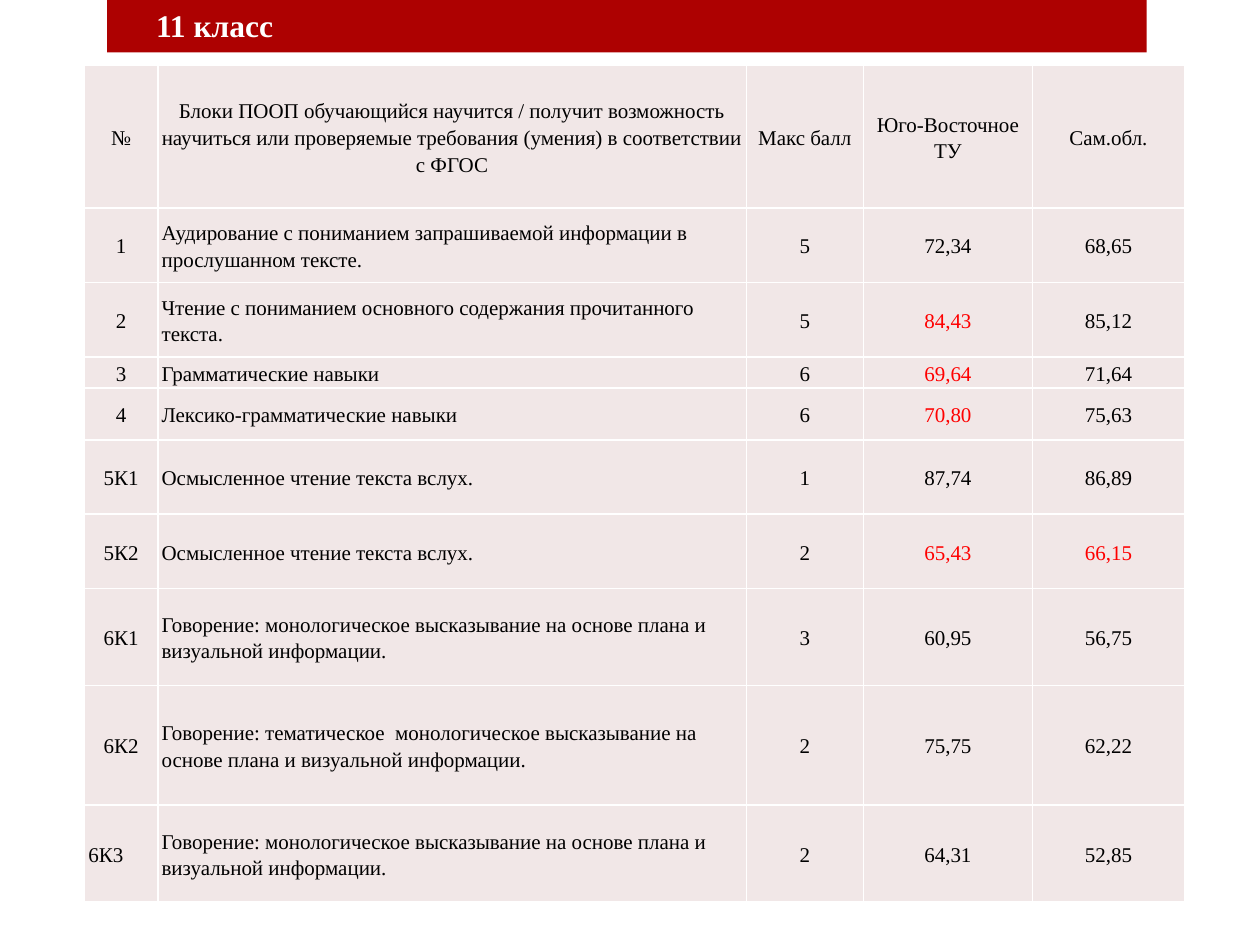
"""Build the grade 11 results slide with its table of skills and scores."""
from lxml.etree import SubElement
from pptx import Presentation
from pptx.dml.color import RGBColor
from pptx.enum.shapes import MSO_SHAPE
from pptx.enum.text import MSO_ANCHOR, MSO_AUTO_SIZE, PP_ALIGN
from pptx.oxml.ns import qn
from pptx.util import Pt

CRIMSON = RGBColor(0xAD, 0x01, 0x01)
BLUSH = RGBColor(0xF1, 0xE7, 0xE7)
WHITE = RGBColor(0xFF, 0xFF, 0xFF)
BLACK = RGBColor(0x00, 0x00, 0x00)
RED = RGBColor(0xFF, 0x00, 0x00)

COLUMN_WIDTHS = [41.8, 336.3, 67, 96.5, 87.1]
RESULTS = [
    (81.4, "№", "Блоки ПООП обучающийся научится / получит возможность научиться "
     "или проверяемые требования (умения) в соответствии с ФГОС",
     "Макс балл", "Юго-Восточное ТУ", "Сам.обл."),
    (42.5, "1", "Аудирование с пониманием запрашиваемой информации в прослушанном тексте.",
     "5", "72,34", "68,65"),
    (42.5, "2", "Чтение с пониманием основного содержания прочитанного текста.",
     "5", "84,43", "85,12"),
    (16.6, "3", "Грамматические навыки", "6", "69,64", "71,64"),
    (29.5, "4", "Лексико-грамматические навыки", "6", "70,80", "75,63"),
    (42.5, "5К1", "Осмысленное чтение текста вслух.", "1", "87,74", "86,89"),
    (42.5, "5К2", "Осмысленное чтение текста вслух.", "2", "65,43", "66,15"),
    (55.4, "6К1", "Говорение: монологическое высказывание на основе плана и "
     "визуальной информации.", "3", "60,95", "56,75"),
    (68.4, "6К2", "Говорение: тематическое  монологическое высказывание на основе плана и "
     "визуальной информации.", "2", "75,75", "62,22"),
    (55.4, "6К3", "Говорение: монологическое высказывание на основе плана и "
     "визуальной информации.", "2", "64,31", "52,85"),
]
RED_SCORES = {"84,43", "69,64", "70,80", "65,43", "66,15"}


def write(frame, text, size=12, color=BLACK, bold=False, align=PP_ALIGN.LEFT, spacing=1.0):
    paragraph = frame.paragraphs[0]
    paragraph.alignment = align
    paragraph.line_spacing = spacing
    run = paragraph.add_run()
    run.text = text
    run.font.name = "Times New Roman"
    run.font.size = Pt(size)
    run.font.bold = bold
    run.font.color.rgb = color


def add_borders(cell):
    properties = cell._tc.get_or_add_tcPr()
    for side in ("lnL", "lnR", "lnT", "lnB"):
        line = SubElement(properties, qn(f"a:{side}"), w=str(Pt(1)))
        fill = SubElement(line, qn("a:solidFill"))
        SubElement(fill, qn("a:srgbClr"), val=str(WHITE))


presentation = Presentation()
presentation.slide_width = Pt(720)
presentation.slide_height = Pt(540)
slide = presentation.slides.add_slide(presentation.slide_layouts[6])

banner = slide.shapes.add_shape(MSO_SHAPE.RECTANGLE, Pt(61.2), Pt(0), Pt(594), Pt(30))
banner.shadow.inherit = False
banner.fill.solid()
banner.fill.fore_color.rgb = CRIMSON
banner.line.fill.background()

scores = slide.shapes.add_table(
    len(RESULTS), len(COLUMN_WIDTHS), Pt(48.4), Pt(37.5),
    Pt(sum(COLUMN_WIDTHS)), Pt(sum(result[0] for result in RESULTS))).table
scores.first_row = False
scores.horz_banding = False
for column, width in zip(scores.columns, COLUMN_WIDTHS):
    column.width = Pt(width)

for row_index, (height, *entries) in enumerate(RESULTS):
    scores.rows[row_index].height = Pt(height)
    for column_index, entry in enumerate(entries):
        cell = scores.cell(row_index, column_index)
        cell.margin_left = cell.margin_right = Pt(2.2)
        cell.margin_top = cell.margin_bottom = Pt(1.4)
        cell.vertical_anchor = MSO_ANCHOR.MIDDLE
        add_borders(cell)
        cell.fill.solid()
        cell.fill.fore_color.rgb = BLUSH
        left_aligned = entry == "6К3" or (column_index == 1 and row_index > 0)
        write(cell.text_frame, entry, spacing=1.14,
              color=RED if entry in RED_SCORES else BLACK,
              align=PP_ALIGN.LEFT if left_aligned else PP_ALIGN.CENTER)

heading = slide.shapes.add_textbox(Pt(82.1), Pt(0), Pt(82.1), Pt(29)).text_frame
heading.word_wrap = False
heading.auto_size = MSO_AUTO_SIZE.SHAPE_TO_FIT_TEXT
write(heading, "11 класс", size=18, color=WHITE, bold=True)

presentation.save("out.pptx")
